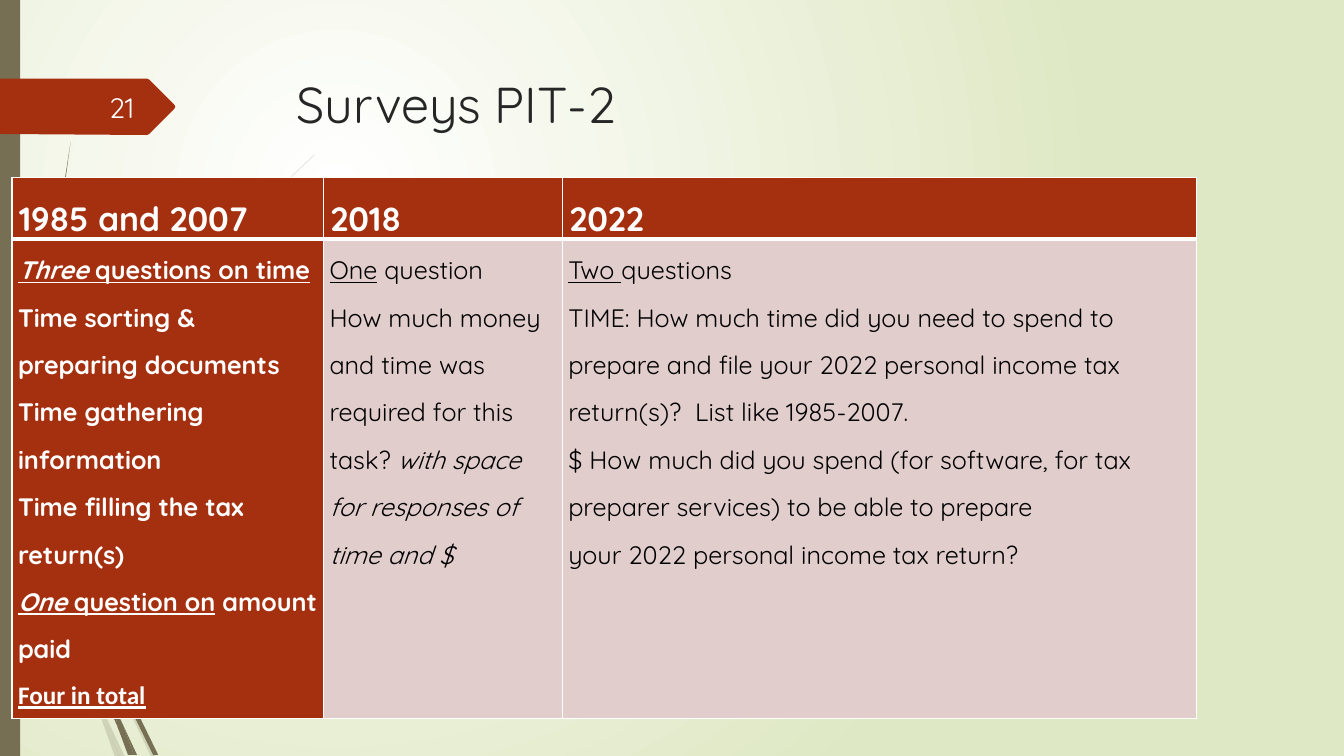
from lxml import etree
from pptx import Presentation
from pptx.dml.color import RGBColor
from pptx.enum.shapes import MSO_SHAPE
from pptx.enum.text import MSO_ANCHOR, PP_ALIGN
from pptx.oxml.ns import qn
from pptx.util import Pt

RECTANGLE = MSO_SHAPE.RECTANGLE
TOP, MIDDLE = MSO_ANCHOR.TOP, MSO_ANCHOR.MIDDLE
LEFT, RIGHT = PP_ALIGN.LEFT, PP_ALIGN.RIGHT

RUST, OLIVE, PINK = "A53010", "766F54", "E1CDCC"
WHITE, BLACK = "FFFFFF", "000000"
GRID = 0.72  # points in one step of the outline coordinates

# Outlines of the grass blades, in grid steps
FAINT_BLADES = [
    [(92, 607), (88, 596), (88, 610), (123, 694), (150, 751), (155, 751), (127, 692)],
    [(119, 751), (124, 751), (105, 711)],
    [(93, 683), (70, 619), (31, 469), (17, 376), (11, 350), (28, 470), (65, 621),
     (92, 693), (101, 714), (99, 707)],
    [(88, 584), (110, 462), (160, 349), (229, 245), (268, 198), (290, 175), (312, 154),
     (312, 153), (289, 175), (268, 197), (228, 244), (158, 348), (107, 461), (85, 584),
     (85, 586), (88, 596)],
    [(101, 714), (114, 751), (119, 751)],
    [(96, 692), (93, 683), (99, 707), (101, 714), (119, 751), (105, 711)],
]
DARK_BLADES = [
    [(113, 649), (110, 641), (111, 656), (132, 708), (152, 749), (157, 749), (136, 706)],
    [(110, 691), (98, 657), (72, 556), (64, 505), (57, 477), (68, 557), (93, 659),
     (111, 708), (117, 722), (116, 717)],
    [(60, 472), (58, 453), (54, 349), (58, 245), (63, 193), (70, 141), (62, 193),
     (56, 245), (52, 349), (55, 449)],
    [(133, 749), (136, 749), (122, 719)],
    [(117, 722), (127, 749), (131, 749)],
    [(116, 706), (110, 691), (116, 717), (117, 722), (130, 749), (133, 749), (122, 719)],
]
NUMBER_TAG = [(0, 78), (146, 78), (148, 79), (173, 104), (174, 106), (173, 108),
              (148, 133), (146, 134), (0, 133)]

# Each cell is a list of paragraphs, each paragraph a list of (text, style) runs
ITALIC, UNDERLINE = {"italic": True}, {"underline": True}
BOTH = ITALIC | UNDERLINE
HEADINGS = ["1985 and 2007", "2018", "2022"]
ANSWERS = [
    [
        [("Three ", BOTH), ("questions on time", UNDERLINE)],
        [("Time sorting & preparing documents", {})],
        [("Time gathering information", {})],
        [("Time filling the tax return(s)", {})],
        [("One ", BOTH), ("question on", UNDERLINE), (" amount paid", {})],
        [("Four in total", UNDERLINE | {"font": "Calibri"})],
    ],
    [
        [("One", UNDERLINE), (" question", {})],
        [("How much money and time was required for this task? ", {}),
         ("with space for responses of time and $", ITALIC)],
    ],
    [
        [("Two ", UNDERLINE), ("questions", {})],
        [("TIME: How much time did you need to spend to prepare and file your 2022 "
          "personal income tax return(s)?  List like 1985-2007.", {})],
        [("$ How much did you spend (for software, for tax preparer services) "
          "to be able to prepare", {})],
        [("your 2022 personal income tax return?", {})],
    ],
]
COLUMN_WIDTHS = [222.5, 170.6, 452.9]
ROW_HEIGHTS = [43.9, 342.7]


def color(value):
    return RGBColor.from_string(value)


class SlideBuilder:
    font = "Quicksand"

    def __init__(self, presentation):
        self.slide = presentation.slides.add_slide(presentation.slide_layouts[6])

    def background(self, center, edge):
        fill = self.slide.background.fill
        fill.gradient()
        for stop, value in zip(fill.gradient_stops, (center, edge)):
            stop.color.rgb = color(value)
        gradient = self.slide.element.find(".//" + qn("a:gradFill"))
        gradient.remove(gradient.find(qn("a:lin")))
        circle = etree.SubElement(gradient, qn("a:path"), {"path": "circle"})
        etree.SubElement(circle, qn("a:fillToRect"),
                         {"l": "50000", "t": "50000", "r": "100000", "b": "100000"})

    def paint(self, shape, value, opacity=100):
        shape.shadow.inherit = False
        shape.line.fill.background()
        shape.fill.solid()
        shape.fill.fore_color.rgb = color(value)
        if opacity < 100:
            solid = shape.element.spPr.find(".//" + qn("a:srgbClr"))
            etree.SubElement(solid, qn("a:alpha"), {"val": str(opacity * 1000)})

    def rectangle(self, left, top, width, height, value):
        shape = self.slide.shapes.add_shape(
            RECTANGLE, Pt(left), Pt(top), Pt(width), Pt(height))
        self.paint(shape, value)

    def outline(self, points, value, opacity=100):
        start, *others = [(Pt(x * GRID), Pt(y * GRID)) for x, y in points]
        builder = self.slide.shapes.build_freeform(*start)
        builder.add_line_segments(others, close=True)
        self.paint(builder.convert_to_shape(), value, opacity)

    def run(self, paragraph, text, size, value, bold=False, italic=False,
            underline=False, font=None):
        run = paragraph.add_run()
        run.text = text
        run.font.name = font or self.font
        run.font.size = Pt(size)
        run.font.bold, run.font.italic, run.font.underline = bold, italic, underline
        run.font.color.rgb = color(value)

    def text(self, left, top, width, height, text, size, value,
             align=LEFT, anchor=TOP):
        box = self.slide.shapes.add_textbox(Pt(left), Pt(top), Pt(width), Pt(height))
        frame = box.text_frame
        frame.word_wrap = True
        frame.vertical_anchor = anchor
        frame.paragraphs[0].alignment = align
        self.run(frame.paragraphs[0], text, size, value)

    def table(self, left, top, widths, heights):
        table = self.slide.shapes.add_table(
            len(heights), len(widths), Pt(left), Pt(top),
            Pt(sum(widths)), Pt(sum(heights))).table
        table.first_row = table.horz_banding = False
        for column, width in zip(table.columns, widths):
            column.width = Pt(width)
        for row, height in zip(table.rows, heights):
            row.height = Pt(height)
        return table

    def cell(self, cell, paragraphs, fill, margin, borders, **style):
        cell.margin_left = cell.margin_right = Pt(margin)
        cell.margin_top = cell.margin_bottom = Pt(0)
        properties = cell._tc.get_or_add_tcPr()
        for side, width in zip("LRTB", borders):
            line = etree.SubElement(properties, qn("a:ln" + side), {"w": str(Pt(width))})
            solid = etree.SubElement(line, qn("a:solidFill"))
            etree.SubElement(solid, qn("a:srgbClr"), {"val": WHITE})
        cell.fill.solid()
        cell.fill.fore_color.rgb = color(fill)
        frame = cell.text_frame
        for index, runs in enumerate(paragraphs):
            paragraph = frame.add_paragraph() if index else frame.paragraphs[0]
            paragraph.line_spacing = 1.5
            for text, emphasis in runs:
                self.run(paragraph, text, **style, **emphasis)


def main():
    presentation = Presentation()
    presentation.slide_width, presentation.slide_height = Pt(960), Pt(540)
    builder = SlideBuilder(presentation)

    # Backdrop: gradient, grass blades, side bar and number tag
    builder.background(WHITE, "DFE8C4")
    for blade in FAINT_BLADES:
        builder.outline(blade, OLIVE, opacity=20)
    for blade in DARK_BLADES:
        builder.outline(blade, OLIVE)
    builder.rectangle(0, 0, 14.4, 540, OLIVE)
    builder.outline(NUMBER_TAG, RUST)

    # Title
    builder.text(204.5, 49, 702, 100.8, "Surveys PIT-2", 36, "262626")

    # Survey table: heading row, then a body whose first column is emphasised
    table = builder.table(8.6, 126.7, COLUMN_WIDTHS, ROW_HEIGHTS)
    for index, (heading, answer) in enumerate(zip(HEADINGS, ANSWERS)):
        first = index == 0
        builder.cell(table.cell(0, index), [[(heading, {})]], RUST, 5, (1, 1, 1, 3),
                     size=24, value=WHITE, bold=True)
        builder.cell(table.cell(1, index), answer, RUST if first else PINK, 4.3,
                     (1, 1, 3, 1), size=18, value=WHITE if first else BLACK, bold=first)

    # Slide number
    builder.text(41.8, 61.9, 61.2, 28.8, "21", 20, "FEFFFF", RIGHT, MIDDLE)

    presentation.save("out.pptx")


if __name__ == "__main__":
    main()
